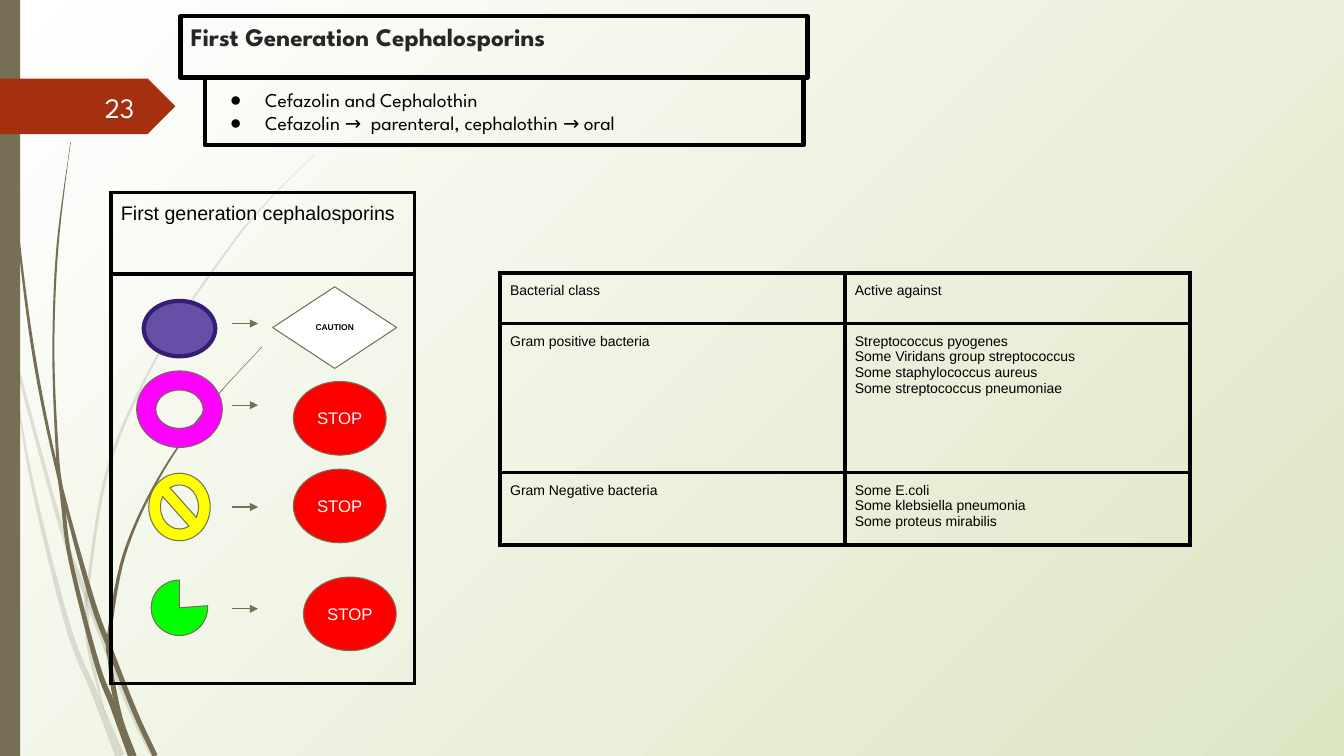
from dataclasses import dataclass
from math import hypot

from lxml.etree import SubElement
from pptx import Presentation
from pptx.dml.color import RGBColor as RGB
from pptx.enum.shapes import MSO_CONNECTOR as Connector, MSO_SHAPE as Shape
from pptx.enum.text import MSO_ANCHOR as Anchor, MSO_AUTO_SIZE as AutoSize, PP_ALIGN as Align
from pptx.oxml.ns import qn
from pptx.util import Inches, Pt


@dataclass(frozen=True)
class Theme:
    heading: str = "League Spartan"
    plain: str = "Arial"
    ink: str = "000000"
    title_ink: str = "262626"
    paper: str = "FFFFFF"
    mist: str = "DDE6C3"
    olive: str = "766F54"
    rust: str = "A53010"
    stop: str = "FF0000"
    purple: str = "674EA7"
    purple_edge: str = "351C75"
    magenta: str = "FF00FF"
    yellow: str = "FFFF00"
    green: str = "00FF00"
    number_size: float = 20
    title_size: float = 18
    body_size: float = 14
    stop_size: float = 12
    table_size: float = 10
    caution_size: float = 6
    frame: float = 3
    hairline: float = 0.75


T = Theme()
WIDTH, HEIGHT = 13.33, 7.5

# Grass blades as (x, y, thickness) along the middle of each blade
PALE_BLADES = [
    [(0, 2.9, .03), (.1, 3.4, .04), (.16, 3.6, .03), (.6, 5.21, .04),
     (.86, 5.92, .05), (1.25, 6.93, .05), (1.52, 7.5, .05)],
    [(.11, 3.5, 0), (.3, 4.7, .03), (.67, 6.2, .05), (.94, 6.88, .06), (1.19, 7.5, .09)],
    [(3.12, 1.53, 0), (2.68, 1.97, .01), (2.28, 2.45, .02), (1.59, 3.48, .02),
     (1.08, 4.62, .03), (.87, 5.84, .03), (.86, 6.05, .04), (.89, 6.46, .04), (1.05, 7.11, 0)],
]
DARK_BLADES = [
    [(.03, 0, .01), (.04, .48, .01), (.07, 1.1, .01), (.18, 2.33, .02), (.34, 3.55, .03),
     (.57, 4.68, .03), (.9, 5.91, .05), (1.1, 6.46, .05), (1.34, 7.07, .05), (1.54, 7.5, .05)],
    [(.7, 1.41, 0), (.57, 2.45, .02), (.53, 3.49, .02), (.57, 4.51, .03), (.62, 4.95, .04),
     (.7, 5.56, .04), (.96, 6.58, .05), (1.12, 7, .06), (1.31, 7.5, .08)],
    [(2.6, 3.44, 0), (2.05, 4.05, .01), (1.57, 4.75, .02), (1.23, 5.51, .03),
     (1.08, 6.32, .04), (1.09, 6.55, .04), (1.13, 6.85, .05), (1.21, 7.17, .04), (1.34, 7.5, .03)],
]


def rgb(color):
    return RGB.from_string(color)


def write(frame, lines, *, size, font=T.plain, color=T.ink, bold=False, align=Align.LEFT,
          anchor=Anchor.TOP, pad=(.1, .1), bullet=None):
    frame.word_wrap, frame.auto_size, frame.vertical_anchor = True, AutoSize.NONE, anchor
    frame.margin_left = frame.margin_right = Inches(pad[0])
    frame.margin_top = frame.margin_bottom = Inches(pad[1])
    for i, line in enumerate(lines):
        para = frame.add_paragraph() if i else frame.paragraphs[0]
        para.alignment, para.space_before = align, Pt(0)
        run = para.add_run()
        run.text = line
        run.font.size, run.font.name, run.font.bold = Pt(size), font, bold
        run.font.color.rgb = rgb(color)
        if bullet:
            props = para._p.get_or_add_pPr()
            props.set("marL", str(Inches(.5)))
            props.set("indent", str(Inches(-.35)))
            SubElement(props, qn("a:buChar"), char=bullet)


def paint(shape, fill=None, edge=None, weight=T.hairline):
    shape.shadow.inherit = False
    if fill:
        shape.fill.solid()
        shape.fill.fore_color.rgb = rgb(fill)
    else:
        shape.fill.background()
    if edge:
        shape.line.color.rgb, shape.line.width = rgb(edge), Pt(weight)
    else:
        shape.line.fill.background()
    return shape


def preset(slide, kind, box, fill, edge=None, weight=T.hairline, adjust=()):
    shape = slide.shapes.add_shape(kind, *map(Inches, box))
    for i, value in enumerate(adjust):
        shape.adjustments[i] = value
    return paint(shape, fill, edge, weight)


def outline(slide, points, fill):
    start, *rest = [(Inches(x), Inches(y)) for x, y in points]
    pen = slide.shapes.build_freeform(*start)
    pen.add_line_segments(rest, close=True)
    return paint(pen.convert_to_shape(), fill)


def blade(slide, nodes, opacity=None, steps=8):
    """Smooth curve through the nodes, widened on both sides."""
    ends = [nodes[0], *nodes, nodes[-1]]
    curve = []
    for a, b, c, d in zip(ends, ends[1:], ends[2:], ends[3:]):
        for t in (k / steps for k in range(steps)):
            curve.append([(2 * q + (r - p) * t + (2 * p - 5 * q + 4 * r - s) * t**2
                           + (3 * q - p - 3 * r + s) * t**3) / 2
                          for p, q, r, s in zip(a, b, c, d)])
    curve.append(nodes[-1])
    left, right = [], []
    for i, (x, y, thick) in enumerate(curve):
        before, after = curve[max(i - 1, 0)], curve[min(i + 1, len(curve) - 1)]
        dx, dy = after[0] - before[0], after[1] - before[1]
        half = max(thick, .005) / 2 / hypot(dx, dy)
        left.append((x - dy * half, y + dx * half))
        right.append((x + dy * half, y - dx * half))
    shape = outline(slide, left + right[::-1], T.olive)
    if opacity:
        tint = shape._element.spPr.find(qn("a:solidFill"))[0]
        SubElement(tint, qn("a:alpha"), val=str(opacity * 1000))


def arrow(slide, x, y, length):
    line = slide.shapes.add_connector(Connector.STRAIGHT, *map(Inches, (x, y, x + length, y)))
    line.line.color.rgb, line.line.width = rgb(T.olive), Pt(T.hairline)
    SubElement(line.line._get_or_add_ln(), qn("a:tailEnd"), type="triangle")
    SubElement(line._element.spPr, qn("a:effectLst"))


def framed_table(slide, box, rows, heights, size):
    x, y, width, height = box
    table = slide.shapes.add_table(len(rows), len(rows[0]), *map(Inches, box)).table
    table.first_row = table.horz_banding = False
    for column in table.columns:
        column.width = Inches(width / len(rows[0]))
    for r, (row, share) in enumerate(zip(rows, heights)):
        table.rows[r].height = Inches(height * share)
        for c, lines in enumerate(row):
            cell = table.cell(r, c)
            write(cell.text_frame, lines, size=size)
            cell.margin_left = cell.margin_right = cell.margin_top = cell.margin_bottom = Inches(.1)
            cell.vertical_anchor = Anchor.TOP
            props = cell._tc.get_or_add_tcPr()
            for side in ("lnL", "lnR", "lnT", "lnB"):
                border = SubElement(props, qn(f"a:{side}"), w=str(Pt(T.frame)))
                SubElement(SubElement(border, qn("a:solidFill")), qn("a:srgbClr"), val=T.ink)
            cell.fill.background()


def backdrop(slide):
    fill = slide.background.fill
    fill.gradient()
    for stop, color, position in zip(fill.gradient_stops, (T.paper, T.mist), (0, 1)):
        stop.color.rgb, stop.position = rgb(color), position
    gradient = slide._element.cSld.find(".//" + qn("a:gradFill"))
    gradient.remove(gradient.find(qn("a:lin")))
    glow = SubElement(gradient, qn("a:path"), path="circle")
    SubElement(glow, qn("a:fillToRect"), r="100000", b="100000")
    for nodes in PALE_BLADES:
        blade(slide, nodes, opacity=20)
    for nodes in DARK_BLADES:
        blade(slide, nodes)
    preset(slide, Shape.RECTANGLE, (0, 0, .2, HEIGHT), T.olive)


def page_tag(slide, box, number):
    x, y, w, h = box
    shoulder = x + w - h / 2
    outline(slide, [(x, y), (shoulder, y), (x + w, y + h / 2), (shoulder, y + h), (x, y + h)], T.rust)
    label = slide.shapes.add_textbox(*map(Inches, (x + w / 3, y + .08, w * .49, .4)))
    write(label.text_frame, [number], size=T.number_size, font=T.heading, color=T.paper,
          align=Align.RIGHT, anchor=Anchor.MIDDLE, pad=(.1, .05))


def heading_box(holder, box, lines, **style):
    holder.left, holder.top, holder.width, holder.height = map(Inches, box)
    paint(holder, edge=T.ink, weight=T.frame)
    write(holder.text_frame, lines, font=T.heading, **style)


def class_panel(slide, box):
    x, y, w, h = box
    framed_table(slide, box, [[["First generation cephalosporins"]], [[]]], (1 / 6, 5 / 6), T.body_size)
    middle = x + .68
    # Symbol, size, colours, adjustments, centre; arrow height; sign centre (from the panel corner)
    entries = [
        (Shape.OVAL, .71, .55, T.purple, T.purple_edge, T.frame, (), 1.35, 1.3, 2.22, 1.34),
        (Shape.DONUT, .85, .76, T.magenta, T.olive, T.hairline, (.25,), 2.15, 2.11, 2.27, 2.24),
        (Shape.NO_SYMBOL, .61, .67, T.yellow, T.olive, T.hairline, (.19,), 3.12, 3.12, 2.27, 3.11),
        (Shape.PIE, .56, .55, T.green, T.olive, T.hairline, (213.45, 162), 4.12, 4.13, 2.37, 4.18),
    ]
    for i, (kind, sw, sh, fill, edge, weight, adjust, cy, arrow_y, sign_x, sign_y) in enumerate(entries):
        preset(slide, kind, (middle - sw / 2, y + cy - sh / 2, sw, sh), fill, edge, weight, adjust)
        arrow(slide, x + 1.2, y + arrow_y, .26)
        kind, sw, sh, fill, word, style = (
            (Shape.OVAL, .92, .73, T.stop, "STOP", dict(size=T.stop_size, color=T.paper)) if i else
            (Shape.DIAMOND, 1.23, .81, T.paper, "CAUTION", dict(size=T.caution_size, bold=True)))
        sign = preset(slide, kind, (x + sign_x - sw / 2, y + sign_y - sh / 2, sw, sh), fill, T.olive)
        write(sign.text_frame, [word], align=Align.CENTER, anchor=Anchor.MIDDLE, **style)


def main():
    deck = Presentation()
    deck.slide_width, deck.slide_height = Inches(WIDTH), Inches(HEIGHT)
    slide = deck.slides.add_slide(deck.slide_layouts[1])
    backdrop(slide)
    page_tag(slide, (0, .78, 1.74, .55), "23")
    heading_box(slide.shapes.title, (1.79, .16, 6.22, .61), ["First Generation Cephalosporins"],
                size=T.title_size, color=T.title_ink, bold=True, pad=(.1, .05))
    heading_box(slide.placeholders[1], (2.03, .77, 5.94, .67),
                ["Cefazolin and Cephalothin", "Cefazolin →  parenteral, cephalothin → oral"],
                size=T.body_size, bullet="●")
    framed_table(slide, (4.96, 2.71, 6.84, 2.7), [
        [["Bacterial class"], ["Active against"]],
        [["Gram positive bacteria"],
         ["Streptococcus pyogenes", "Some Viridans group streptococcus",
          "Some staphylococcus aureus", "Some streptococcus pneumoniae"]],
        [["Gram Negative bacteria"],
         ["Some E.coli", "Some klebsiella pneumonia", "Some proteus mirabilis"]],
    ], (.185, .548, .267), T.table_size)
    class_panel(slide, (1.1, 1.91, 3.01, 4.87))
    deck.save("out.pptx")


if __name__ == "__main__":
    main()
